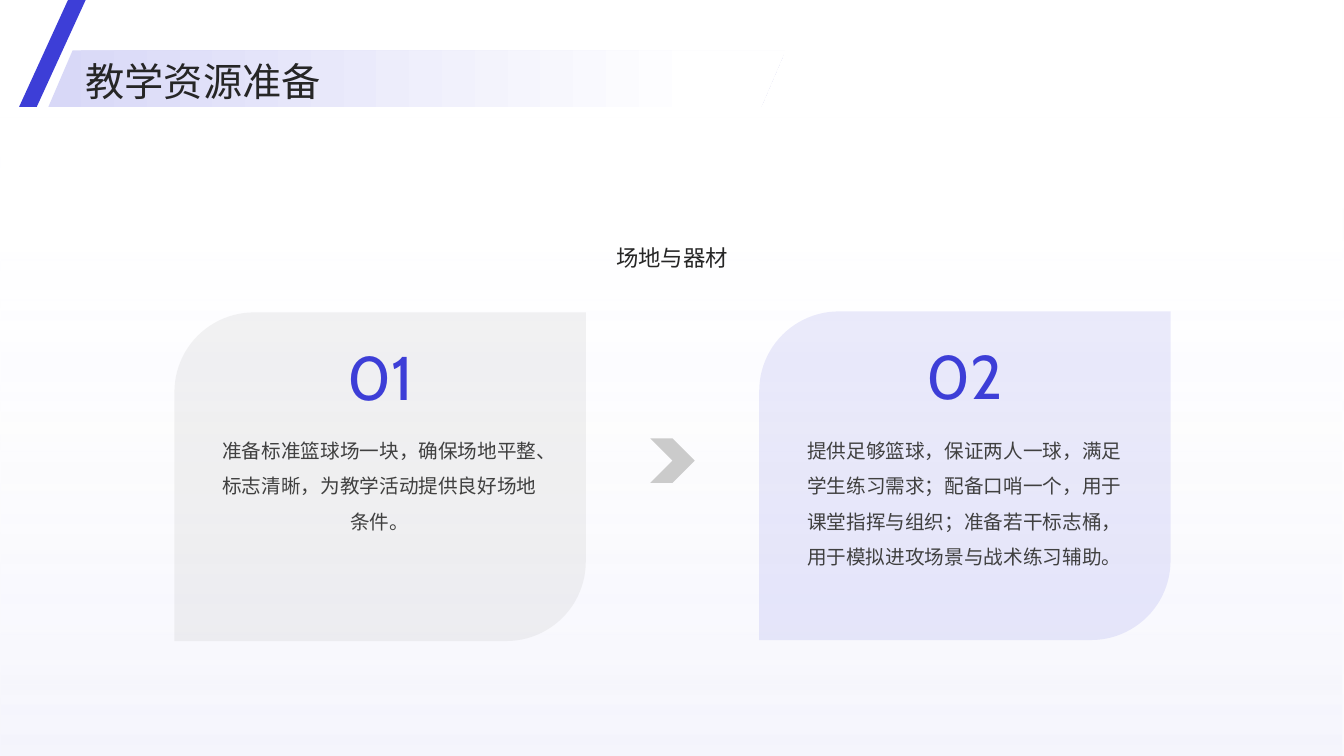
import pptx
import pptx.util
import pptx.dml.color
import pptx.enum.shapes
import pptx.enum.text
import pptx.oxml.ns
import lxml.etree

SCALE = 9144
HUES = {
    "blue": "3D3ED7",
    "pale": "D8D8F7",
    "white": "FFFFFF",
    "grey": "BFBFBF",
    "dark": "262626",
    "body": "404040",
}
SANS = "Noto Sans CJK SC"
FORMS = pptx.enum.shapes.MSO_SHAPE
ALIGN = pptx.enum.text.PP_ALIGN
ANCHOR = pptx.enum.text.MSO_ANCHOR


def emu(box):
    """Turn a sequence of px lengths into EMU."""
    return [pptx.util.Emu(part * SCALE) for part in box]


def paint(color, hue, alpha=100):
    """Set a colour and, below 100 percent, its alpha."""
    color.rgb = pptx.dml.color.RGBColor.from_string(HUES[hue])
    return alpha * 1000


def fade(node, alphas):
    """Add alpha values to the colours under a node, in order."""
    for color, alpha in zip(node.iter(pptx.oxml.ns.qn("a:srgbClr")), alphas):
        if alpha < 100000:
            part = lxml.etree.SubElement(color, pptx.oxml.ns.qn("a:alpha"))
            part.set("val", str(alpha))


def add_form(slide, kind, box, stops, angle=0, adjust=()):
    """Draw a preset shape with a plain fill or a two-stop gradient."""
    shape = slide.shapes.add_shape(kind, *emu(box))
    shape.shadow.inherit = False
    shape.line.fill.background()
    for index, value in enumerate(adjust):
        shape.adjustments[index] = value
    if len(stops) == 1:
        shape.fill.solid()
        alphas = [paint(shape.fill.fore_color, *stops[0])]
    else:
        shape.fill.gradient()
        shape.fill.gradient_angle = angle
        alphas = []
        for stop, (place, hue, alpha) in zip(shape.fill.gradient_stops, stops):
            stop.position = place
            alphas.append(paint(stop.color, hue, alpha))
    fade(shape._element.spPr, alphas)


def add_text(slide, text, box, size=14, font=SANS, hue="body",
             align=ALIGN.CENTER, anchor=ANCHOR.TOP, space=1.5, inset=True):
    """Place a wrapped text box with one formatted run."""
    frame = slide.shapes.add_textbox(*emu(box)).text_frame
    frame.word_wrap = True
    frame.vertical_anchor = anchor
    if not inset:
        frame.margin_left = frame.margin_right = 0
        frame.margin_top = frame.margin_bottom = 0
    para = frame.paragraphs[0]
    para.alignment = align
    para.line_spacing = space
    run = para.add_run()
    run.text = text
    run.font.size = pptx.util.Pt(size)
    paint(run.font.color, hue)
    run.font.name = font
    east = lxml.etree.SubElement(run.font._element, pptx.oxml.ns.qn("a:ea"))
    east.set("typeface", font)


def add_card(slide, label, text, left, top, width, hue, alpha):
    """Draw a card with its number and body text."""
    add_form(slide, FORMS.ROUND_2_DIAG_RECTANGLE, (left, top, 408, 326),
             [(hue, alpha)], adjust=(0.242, 0))
    add_text(slide, label, (left + 204 - width // 2, top + 20, width, 84),
             size=44, font="Cabin", hue="blue", anchor=ANCHOR.BOTTOM, space=1.1)
    add_text(slide, text, (left + 28, 419, 351, 190))


def main():
    """Build the slide and save it."""
    deck = pptx.Presentation()
    deck.slide_width, deck.slide_height = emu((1333, 750))
    slide = deck.slides.add_slide(deck.slide_layouts[6])
    add_form(slide, FORMS.RECTANGLE, (0, 0, 1333, 750),
             [(0, "pale", 25), (0.85, "white", 0)], angle=90)
    add_card(slide, "01", "准备标准篮球场一块，确保场地平整、标志清晰，为教学活动提供良好场地条件。",
             173, 310, 94, "grey", 20)
    add_card(slide, "02", "提供足够篮球，保证两人一球，满足学生练习需求；配备口哨一个，"
             "用于课堂指挥与组织；准备若干标志桶，用于模拟进攻场景与战术练习辅助。",
             753, 309, 104, "blue", 10)
    add_form(slide, FORMS.CHEVRON, (645, 435, 44, 44), [("grey", 80)])
    add_text(slide, "场地与器材", (172, 123, 989, 146), size=16, hue="dark",
             anchor=ANCHOR.BOTTOM, inset=False)
    add_form(slide, FORMS.PARALLELOGRAM, (48, 50, 731, 56),
             [(0, "pale", 100), (0.89, "white", 100)], adjust=(0.429,))
    add_text(slide, "教学资源准备", (85, 52, 1175, 51), size=28, hue="dark",
             align=ALIGN.LEFT, anchor=ANCHOR.MIDDLE, space=1.1, inset=False)
    add_form(slide, FORMS.PARALLELOGRAM, (19, 0, 66, 106), [("blue",)],
             adjust=(0.735,))
    deck.save("out.pptx")


if __name__ == "__main__":
    main()
